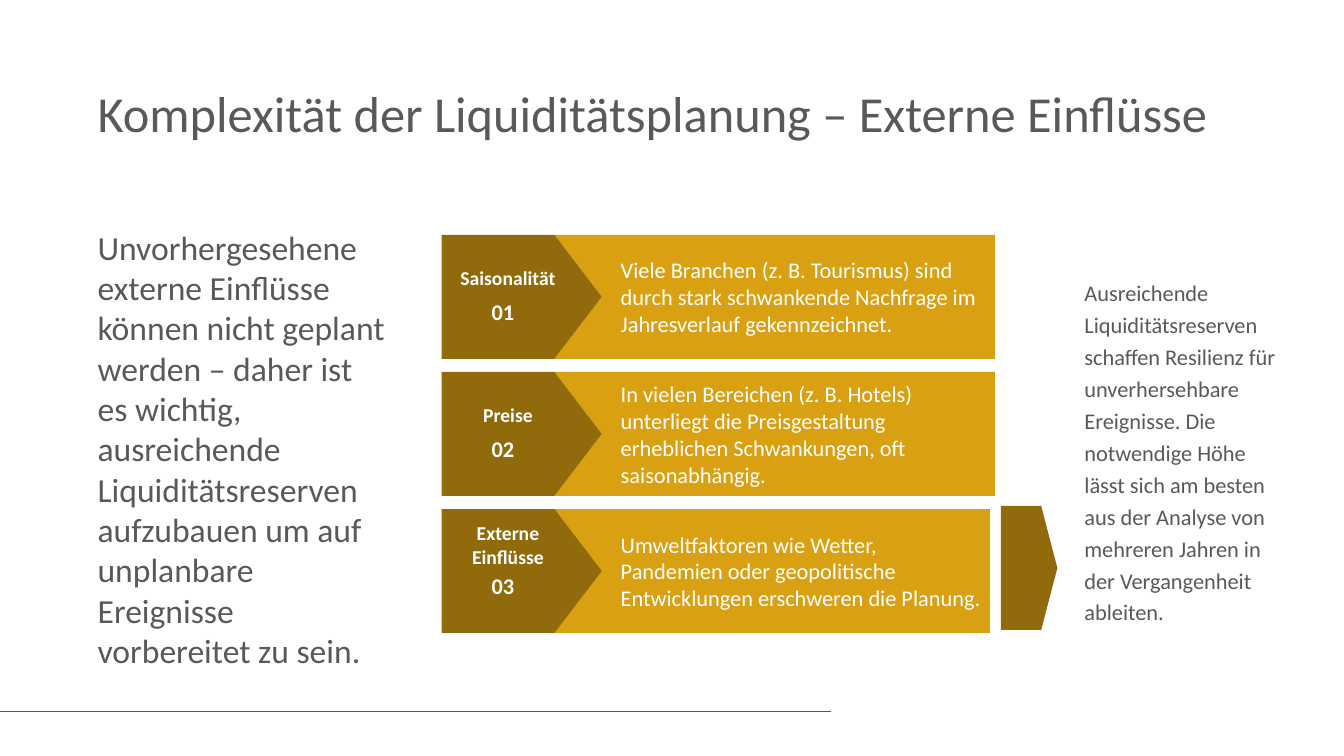
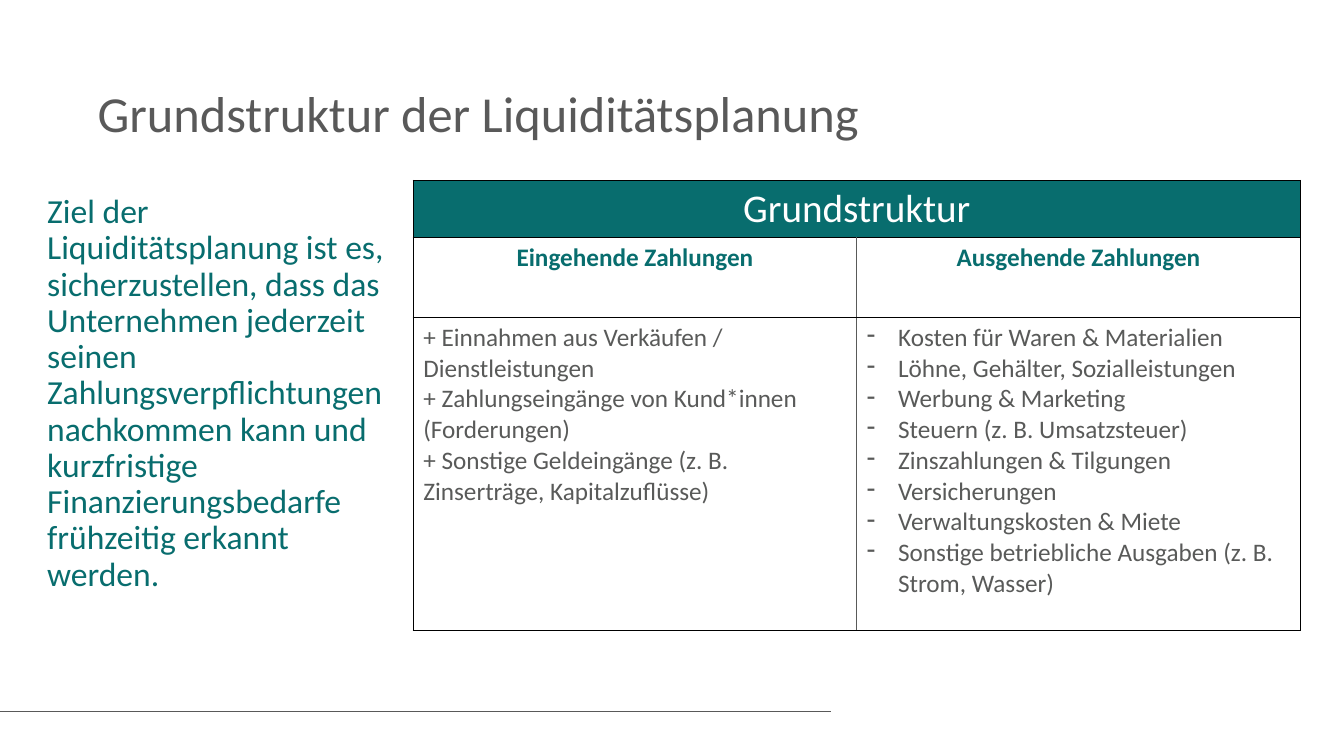
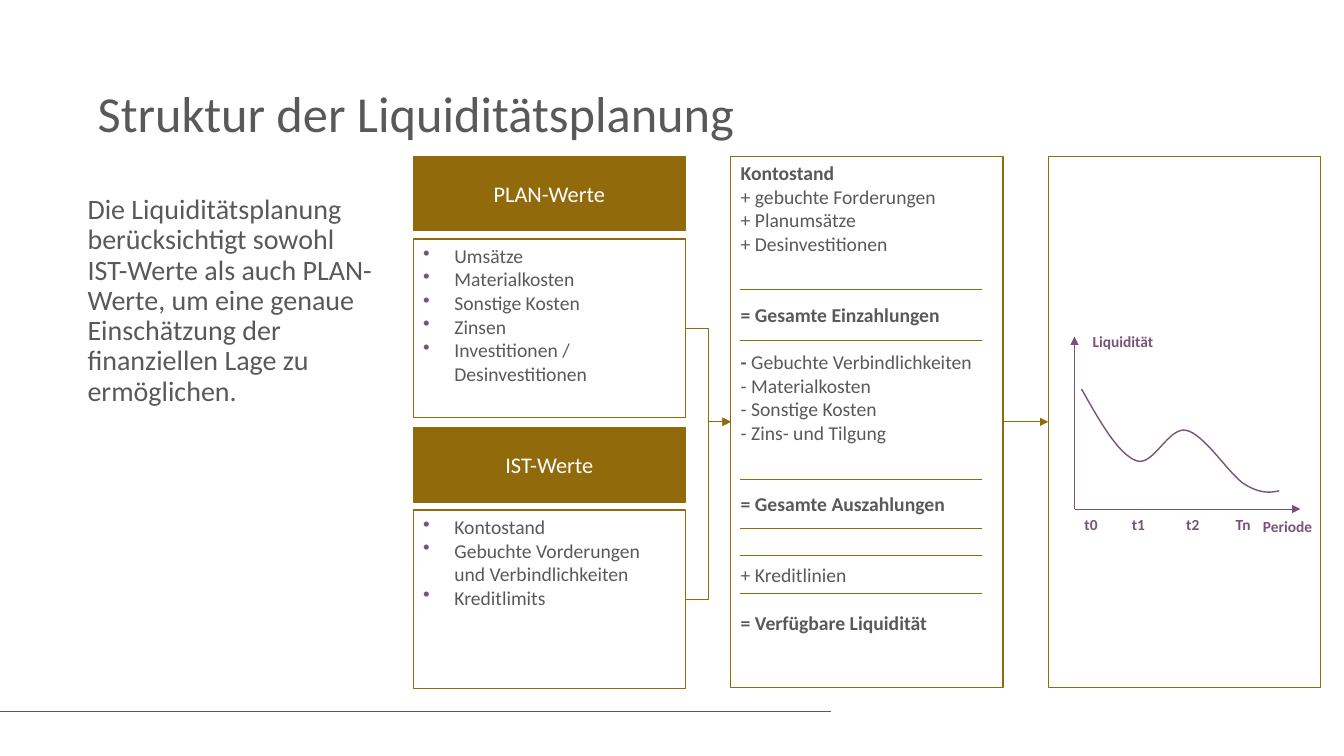
from dataclasses import dataclass
from typing import NamedTuple, Optional, Sequence

from lxml.etree import SubElement
from pptx import Presentation
from pptx.dml.color import RGBColor
from pptx.enum.shapes import MSO_CONNECTOR, MSO_SHAPE
from pptx.enum.text import MSO_ANCHOR, PP_ALIGN
from pptx.oxml.ns import qn
from pptx.util import Inches, Pt

GRID = Inches(0.1)
COLUMNS, ROWS = 133.33, 75


@dataclass(frozen=True)
class Theme:
    font: str = "Calibri"
    text: str = "595959"
    table_text: str = "595A59"
    outline: str = "000000"
    white: str = "FFFFFF"
    gold: str = "D9A012"
    bronze: str = "916A0C"
    teal: str = "086D6E"
    purple: str = "79527B"
    title: int = 36
    table_title: int = 28
    lead: int = 24
    lead_small: int = 20
    table_body: int = 18
    body: int = 16
    detail: int = 14
    axis: int = 11


THEME = Theme()


class Box(NamedTuple):
    """Left, top, width and height in grid columns and rows."""
    left: float
    top: float
    width: float
    height: float


class Point(NamedTuple):
    x: float
    y: float


@dataclass(frozen=True)
class Style:
    size: int
    color: str = THEME.text
    bold: bool = False
    align: PP_ALIGN = PP_ALIGN.LEFT
    anchor: MSO_ANCHOR = MSO_ANCHOR.TOP
    spacing: Optional[float] = None
    bullet: str = ""
    bullet_color: str = THEME.purple


@dataclass(frozen=True)
class Entry:
    """One paragraph; bold_lead is a bold start before the text."""
    text: str
    bold: bool = False
    before: int = 0
    bold_lead: str = ""


@dataclass(frozen=True)
class Influence:
    label: str
    label_offset: float
    description: str
    banner_left: float = 55


@dataclass(frozen=True)
class ValueGroup:
    heading: str
    items: tuple


class AxisLabel(NamedTuple):
    text: str
    left: float
    top: float


CENTER, MIDDLE = PP_ALIGN.CENTER, MSO_ANCHOR.MIDDLE


def emu(cells: float) -> int:
    return round(cells * GRID)


def rgb(color: str) -> RGBColor:
    return RGBColor.from_string(color)


def add_bullet(paragraph, style: Style) -> None:
    properties = paragraph._p.get_or_add_pPr()
    properties.set("marL", str(Inches(0.31)))
    properties.set("indent", str(-Inches(0.31)))
    color = SubElement(properties, qn("a:buClr"))
    SubElement(color, qn("a:srgbClr"), val=style.bullet_color)
    SubElement(properties, qn("a:buChar"), char=style.bullet)


def write(frame, entries: Sequence[Entry], style: Style) -> None:
    for index, entry in enumerate(entries):
        paragraph = frame.add_paragraph() if index else frame.paragraphs[0]
        if style.bullet:
            add_bullet(paragraph, style)
        paragraph.alignment = style.align
        if style.spacing:
            paragraph.line_spacing = style.spacing
        if entry.before:
            paragraph.space_before = Pt(entry.before)
        pieces = ((entry.bold_lead, True), (entry.text, entry.bold or style.bold))
        for text, bold in pieces:
            if text:
                run = paragraph.add_run()
                run.text = text
                run.font.name = THEME.font
                run.font.size = Pt(style.size)
                run.font.bold = bold
                run.font.color.rgb = rgb(style.color)


def write_in_shape(shape, entries: Sequence[Entry], style: Style) -> None:
    frame = shape.text_frame
    frame.word_wrap = True
    frame.vertical_anchor = style.anchor
    write(frame, entries, style)


def add_text(slide, box: Box, text: str, style: Style) -> None:
    textbox = slide.shapes.add_textbox(*map(emu, box))
    write_in_shape(textbox, [Entry(text)], style)


def add_panel(slide, box: Box, fill: str = THEME.white):
    panel = slide.shapes.add_shape(MSO_SHAPE.RECTANGLE, *map(emu, box))
    panel.shadow.inherit = False
    panel.fill.solid()
    panel.fill.fore_color.rgb = rgb(fill)
    panel.line.color.rgb = rgb(THEME.bronze)
    panel.line.width = Pt(1)
    return panel


def add_outline(slide, points: Sequence[Point], closed: bool):
    start, *rest = [(emu(point.x), emu(point.y)) for point in points]
    builder = slide.shapes.build_freeform(*start)
    builder.add_line_segments(rest, close=closed)
    outline = builder.convert_to_shape()
    outline.shadow.inherit = False
    return outline


def add_polygon(slide, corners: Sequence[Point], fill: str) -> None:
    polygon = add_outline(slide, corners, closed=True)
    polygon.fill.solid()
    polygon.fill.fore_color.rgb = rgb(fill)
    polygon.line.fill.background()


def add_line(slide, start: Point, end: Point, color: str, width: float = 0.75,
             arrow: bool = False, kind: MSO_CONNECTOR = MSO_CONNECTOR.STRAIGHT):
    line = slide.shapes.add_connector(kind, *map(emu, (*start, *end)))
    line.line.color.rgb = rgb(color)
    line.line.width = Pt(width)
    if arrow:
        SubElement(line.line._get_or_add_ln(), qn("a:tailEnd"), type="triangle")
    SubElement(line._element.spPr, qn("a:effectLst"))
    return line


def new_slide(deck, title: str):
    """Add a slide with the shared title and footer rule."""
    slide = deck.slides.add_slide(deck.slide_layouts[6])
    add_line(slide, Point(0, 70.6), Point(82.4, 70.6), THEME.text, 1)
    add_text(slide, Box(8.7, 8.3, 116.1, 8.8), title, Style(THEME.title, spacing=0.9))
    return slide


INFLUENCES = (
    Influence("Saisonalität", 2.6,
              "Viele Branchen (z. B. Tourismus) sind durch stark schwankende "
              "Nachfrage im Jahresverlauf gekennzeichnet."),
    Influence("Preise", 2.6,
              "In vielen Bereichen (z. B. Hotels) unterliegt die Preisgestaltung "
              "erheblichen Schwankungen, oft saisonabhängig."),
    Influence("Externe Einflüsse", 0.7,
              "Umweltfaktoren wie Wetter, Pandemien oder geopolitische "
              "Entwicklungen erschweren die Planung.", 54.5),
)
BANNER_HEIGHT = 12.3


def add_arrow(slide, box: Box, head: float) -> None:
    """Draw a block arrow whose point takes up the last head columns."""
    left, top, width, height = box
    right, bottom = left + width, top + height
    add_polygon(slide, [
        Point(left, top), Point(right - head, top), Point(right, top + height / 2),
        Point(right - head, bottom), Point(left, bottom)], THEME.bronze)


def add_influence(slide, number: int, influence: Influence) -> None:
    top = 23.3 + 13.6 * (number - 1)
    bottom = top + BANNER_HEIGHT
    left, right = influence.banner_left, influence.banner_left + 43.7
    add_polygon(slide, [
        Point(left, top), Point(left + 4.7, top + BANNER_HEIGHT / 2),
        Point(left, bottom), Point(right, bottom), Point(right, top)], THEME.gold)
    add_arrow(slide, Box(43.8, top, 15.9, BANNER_HEIGHT), 4.7)
    add_text(slide, Box(43.6, top + influence.label_offset, 13.6, 3.4), influence.label,
             Style(THEME.detail, THEME.white, bold=True, align=CENTER))
    add_text(slide, Box(43, top + 5.6, 13.8, 4), f"{number:02}",
             Style(THEME.body, THEME.white, bold=True, align=CENTER, anchor=MIDDLE))
    add_text(slide, Box(60.6, top, 37.7, BANNER_HEIGHT), influence.description,
             Style(THEME.body, THEME.white, anchor=MIDDLE))


def build_influences(deck) -> None:
    slide = new_slide(deck, "Komplexität der Liquiditätsplanung – Externe Einflüsse")
    add_text(slide, Box(8.7, 22, 30.9, 45.4),
             "Unvorhergesehene externe Einflüsse können nicht geplant werden – daher "
             "ist es wichtig, ausreichende Liquiditätsreserven aufzubauen um auf "
             "unplanbare Ereignisse vorbereitet zu sein.", Style(THEME.lead))
    for number, influence in enumerate(INFLUENCES, start=1):
        add_influence(slide, number, influence)
    add_arrow(slide, Box(99.3, 50.2, 5.6, BANNER_HEIGHT), 1.6)
    add_text(slide, Box(106.6, 26.7, 22.3, 36.3),
             "Ausreichende Liquiditätsreserven schaffen Resilienz für unverhersehbare "
             "Ereignisse. Die notwendige Höhe lässt sich am besten aus der Analyse von "
             "mehreren Jahren in der Vergangenheit ableiten.",
             Style(THEME.body, spacing=1.19))


INCOMING = (
    "+ Einnahmen aus Verkäufen / Dienstleistungen",
    "+ Zahlungseingänge von Kund*innen (Forderungen)",
    "+ Sonstige Geldeingänge (z. B. Zinserträge, Kapitalzuflüsse)",
)
OUTGOING = (
    "Kosten für Waren & Materialien",
    "Löhne, Gehälter, Sozialleistungen",
    "Werbung & Marketing",
    "Steuern (z. B. Umsatzsteuer)",
    "Zinszahlungen & Tilgungen",
    "Versicherungen",
    "Verwaltungskosten & Miete",
    "Sonstige betriebliche Ausgaben (z. B. Strom, Wasser)",
)
TABLE_ROW_HEIGHTS = (5.6, 7.9, 31.1)


def add_border(cell, side: str, color: str) -> None:
    properties = cell._tc.get_or_add_tcPr()
    border = SubElement(properties, qn(f"a:ln{side}"), w=str(Pt(1)))
    SubElement(SubElement(border, qn("a:solidFill")), qn("a:srgbClr"), val=color)


def add_structure_table(slide) -> None:
    box = Box(41, 17.9, 88, sum(TABLE_ROW_HEIGHTS))
    table = slide.shapes.add_table(3, 2, *map(emu, box)).table
    table.first_row = table.horz_banding = False
    for row, height in zip(table.rows, TABLE_ROW_HEIGHTS):
        row.height = emu(height)
    table.cell(0, 0).merge(table.cell(0, 1))

    heading = Style(THEME.table_title, THEME.white, align=CENTER)
    subheading = Style(THEME.table_body, THEME.teal, bold=True, align=CENTER)
    plain = Style(THEME.table_body, THEME.table_text)
    dashed = Style(THEME.table_body, THEME.table_text, bullet="-",
                   bullet_color=THEME.table_text)
    contents = (
        ((("Grundstruktur",), heading),),
        ((("Eingehende Zahlungen",), subheading), (("Ausgehende Zahlungen",), subheading)),
        ((INCOMING, plain), (OUTGOING, dashed)),
    )
    for row, row_contents in enumerate(contents):
        for column, (lines, style) in enumerate(row_contents):
            cell = table.cell(row, column)
            for side in "LRTB":
                outer = side in "TB" or row == 0 or (side == "L") == (column == 0)
                add_border(cell, side, THEME.outline if outer else THEME.table_text)
            cell.fill.solid()
            cell.fill.fore_color.rgb = rgb(THEME.white if row else THEME.teal)
            write(cell.text_frame, [Entry(line) for line in lines], style)


def build_basic_structure(deck) -> None:
    slide = new_slide(deck, "Grundstruktur der Liquiditätsplanung")
    add_text(slide, Box(3.7, 18.8, 37.3, 41),
             "Ziel der Liquiditätsplanung ist es, sicherzustellen, dass das Unternehmen "
             "jederzeit seinen Zahlungsverpflichtungen nachkommen kann und kurzfristige "
             "Finanzierungsbedarfe frühzeitig erkannt werden.",
             Style(THEME.lead, THEME.teal, spacing=0.9))
    add_structure_table(slide)


VALUE_GROUPS = (
    ValueGroup("PLAN-Werte", ("Umsätze", "Materialkosten", "Sonstige Kosten", "Zinsen",
                              "Investitionen / Desinvestitionen")),
    ValueGroup("IST-Werte", ("Kontostand", "Gebuchte Vorderungen und Verbindlichkeiten",
                             "Kreditlimits")),
)
ONE_LINE, TWO_LINES = 17, 34
ACCOUNT = (
    Entry("Kontostand", bold=True),
    Entry("+ gebuchte Forderungen"),
    Entry("+ Planumsätze"),
    Entry("+ Desinvestitionen"),
    Entry("= Gesamte Einzahlungen", bold=True, before=TWO_LINES),
    Entry("Gebuchte Verbindlichkeiten", before=ONE_LINE, bold_lead="- "),
    Entry("- Materialkosten"),
    Entry("- Sonstige Kosten"),
    Entry("- Zins- und Tilgung"),
    Entry("= Gesamte Auszahlungen", bold=True, before=TWO_LINES),
    Entry("+ Kreditlinien", before=TWO_LINES),
    Entry("= Verfügbare Liquidität", bold=True, before=ONE_LINE),
)
ACCOUNT_RULES = (28.7, 33.8, 47.6, 52.4, 55.1, 58.9)
AXIS_LABELS = (
    AxisLabel("Liquidität", 107.4, 32.5),
    AxisLabel("t0", 106.6, 50.6),
    AxisLabel("t1", 111.3, 50.6),
    AxisLabel("t2", 116.7, 50.6),
    AxisLabel("Tn", 121.6, 50.6),
    AxisLabel("Periode", 124.3, 50.8),
)
# Each Bézier piece shares its last point with the first of the next one.
LIQUIDITY_CURVE = tuple(Point(*pair) for pair in (
    (107.3, 38.6), (109.1, 41.8), (110.9, 45), (112.7, 45.7), (114.4, 46.4),
    (115.9, 42.3), (117.7, 42.7), (119.5, 43.1), (121.9, 47), (123.4, 48),
    (125, 49), (126, 48.9), (126.9, 48.7)))


def bezier_points(controls: Sequence[Point], steps: int = 16) -> list:
    points = [controls[0]]
    for start in range(0, len(controls) - 1, 3):
        piece = controls[start:start + 4]
        for step in range(1, steps + 1):
            t = step / steps
            weights = ((1 - t) ** 3, 3 * t * (1 - t) ** 2, 3 * t ** 2 * (1 - t), t ** 3)
            points.append(Point(sum(w * p.x for w, p in zip(weights, piece)),
                                sum(w * p.y for w, p in zip(weights, piece))))
    return points


def add_liquidity_sketch(slide) -> None:
    origin = Point(106.6, 50.5)
    for tip in (Point(129, origin.y), Point(origin.x, 33.4)):
        add_line(slide, origin, tip, THEME.purple, arrow=True)
    for label in AXIS_LABELS:
        add_text(slide, Box(label.left, label.top, 10, 2.9), label.text,
                 Style(THEME.axis, THEME.purple, bold=True))
    curve = add_outline(slide, bezier_points(LIQUIDITY_CURVE), closed=False)
    curve.fill.background()
    curve.line.color.rgb = rgb(THEME.purple)
    curve.line.width = Pt(1)


def build_structure(deck) -> None:
    slide = new_slide(deck, "Struktur der Liquiditätsplanung")
    add_text(slide, Box(7.7, 18.9, 30.9, 24.9),
             "Die Liquiditätsplanung berücksichtigt sowohl IST-Werte als auch PLAN-Werte, "
             "um eine genaue Einschätzung der finanziellen Lage zu ermöglichen.",
             Style(THEME.lead_small, spacing=0.9))

    top, width, height, gap = 15.5, 27, 52.7, 4.5
    values_left, account_left, sketch_left = (41 + i * (width + gap) for i in range(3))
    middle = top + height / 2
    account = add_panel(slide, Box(account_left, top, width, height))
    write_in_shape(account, ACCOUNT, Style(THEME.detail))
    sketch = add_panel(slide, Box(sketch_left, top, width, height))

    for index, group in enumerate(VALUE_GROUPS):
        group_top = top + 26.9 * index
        heading = add_panel(slide, Box(values_left, group_top, width, 7.4), THEME.bronze)
        write_in_shape(heading, [Entry(group.heading)],
                       Style(THEME.body, THEME.white, align=CENTER, anchor=MIDDLE))
        values = add_panel(slide, Box(values_left, group_top + 8.2, width, 17.7))
        write_in_shape(values, [Entry(item) for item in group.items],
                       Style(THEME.detail, bullet="•"))
        link = add_line(slide, Point(values_left + width, group_top + 17),
                        Point(account_left, middle), THEME.bronze, arrow=True,
                        kind=MSO_CONNECTOR.ELBOW)
        link.begin_connect(values, 3)
        link.end_connect(account, 1)

    link = add_line(slide, Point(account_left + width, middle),
                    Point(sketch_left, middle), THEME.bronze, arrow=True)
    link.begin_connect(account, 3)
    link.end_connect(sketch, 1)
    for rule in ACCOUNT_RULES:
        add_line(slide, Point(73.4, rule), Point(97.4, rule), THEME.bronze)
    add_liquidity_sketch(slide)


def main() -> None:
    deck = Presentation()
    deck.slide_width, deck.slide_height = emu(COLUMNS), emu(ROWS)
    build_influences(deck)
    build_basic_structure(deck)
    build_structure(deck)
    deck.save("out.pptx")


if __name__ == "__main__":
    main()
